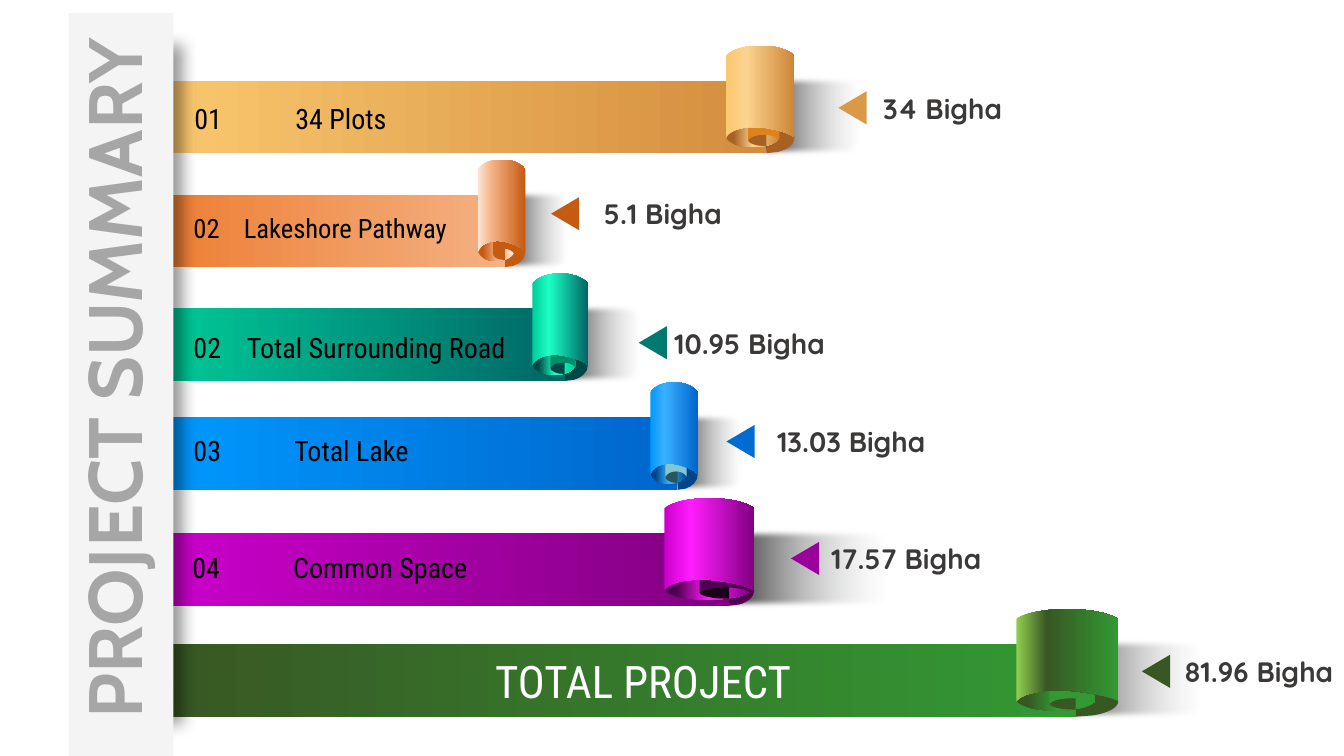
from collections import namedtuple

from lxml import etree
from pptx import Presentation
from pptx.dml.color import RGBColor
from pptx.enum.shapes import MSO_SHAPE
from pptx.enum.text import MSO_ANCHOR, MSO_AUTO_SIZE, PP_ALIGN
from pptx.oxml.ns import qn
from pptx.util import Pt

RECTANGLE, OVAL = MSO_SHAPE.RECTANGLE, MSO_SHAPE.OVAL
TRIANGLE = MSO_SHAPE.ISOSCELES_TRIANGLE
TOP, NO_FIT = MSO_ANCHOR.TOP, MSO_AUTO_SIZE.NONE
LEFT, CENTER = PP_ALIGN.LEFT, PP_ALIGN.CENTER

EMU_PER_PX = 9144  # 100 px to the inch

# Colours
BLACK, WHITE = RGBColor(0, 0, 0), RGBColor(255, 255, 255)
PANEL, TITLE_GRAY = RGBColor(0xF4, 0xF4, 0xF4), RGBColor(0xA6, 0xA6, 0xA6)
VALUE_GRAY, MIST = RGBColor(0x3B, 0x38, 0x38), RGBColor(0xE9, 0xEB, 0xEA)
GOLD, GOLD_GLOW = RGBColor(0xFA, 0xC8, 0x6F), RGBColor(0xFB, 0xD4, 0x8F)
GOLD_END, GOLD_EDGE = RGBColor(0xD4, 0x8D, 0x3E), RGBColor(0xCE, 0x85, 0x37)
GOLD_DARK, GOLD_CORE = RGBColor(0xA7, 0x61, 0x24), RGBColor(0xDD, 0x82, 0x1D)
GOLD_ARROW = RGBColor(0xDB, 0x99, 0x48)
ORANGE, PEACH = RGBColor(0xED, 0x7D, 0x31), RGBColor(0xF4, 0xB1, 0x83)
CREAM, RUST = RGBColor(0xFB, 0xE5, 0xD6), RGBColor(0xC5, 0x5A, 0x11)
TEAL, TEAL_GLOW = RGBColor(0x00, 0xCC, 0x99), RGBColor(0x1D, 0xFF, 0xC4)
TEAL_END, TEAL_DARK = RGBColor(0x00, 0x66, 0x66), RGBColor(0x00, 0x48, 0x46)
TEAL_CORE, TEAL_ARROW = RGBColor(0x00, 0x8E, 0x69), RGBColor(0x00, 0x7A, 0x70)
BLUE, BLUE_GLOW = RGBColor(0x00, 0x99, 0xFF), RGBColor(0x3B, 0xB0, 0xFF)
BLUE_END, BLUE_DARK = RGBColor(0x00, 0x66, 0xCC), RGBColor(0x00, 0x45, 0x8A)
BLUE_CORE, BLUE_FLAP = RGBColor(0x81, 0xC6, 0xD1), RGBColor(0x28, 0x58, 0x5E)
BLUE_ARROW = RGBColor(0x00, 0x6C, 0xD2)
PURPLE, PURPLE_GLOW = RGBColor(0xCC, 0x00, 0xCC), RGBColor(0xFF, 0x1D, 0xFF)
PURPLE_END, PURPLE_DARK = RGBColor(0x80, 0x00, 0x80), RGBColor(0x50, 0x00, 0x50)
PURPLE_FLAP, PURPLE_ARROW = RGBColor(0x1A, 0x00, 0x1A), RGBColor(0x9A, 0x00, 0x9A)
LIME, FOREST = RGBColor(0x92, 0xD0, 0x50), RGBColor(0x38, 0x57, 0x23)
GREEN = RGBColor(0x33, 0x99, 0x33)

# Scroll edges run left to right: curl, core, ribbon end, eye end, curl end
Scroll = namedtuple("Scroll", "top curl core end eye right shade")
Palette = namedtuple("Palette", "ribbon curl eye core flap arrow")
Label = namedtuple("Label", "text box tab size")
Value = namedtuple("Value", "text arrow box")

BANDS = [
    (Scroll(45, 720, 742, 760, 773, 788, (746, 114)),
     Palette((GOLD, GOLD_END), (GOLD, GOLD_GLOW, GOLD_EDGE),
             (GOLD_DARK, GOLD_GLOW, GOLD_EDGE), GOLD_CORE, GOLD_DARK, GOLD_ARROW),
     Label("01\t34 Plots", (183, 96, 332, 44), 100, 20),
     Value("34 Bigha", (829, 93), (855, 86, 160, 44))),
    (Scroll(158, 474, 489, 501, 510, 521, (492, 79)),
     Palette((ORANGE, PEACH), (CREAM, PEACH, RUST), (RUST, PEACH, CREAM),
             RUST, RUST, RUST),
     Label("02\tLakeshore Pathway", (182, 205, 281, 42), 50, 19),
     Value("5.1 Bigha", (544, 198), (570, 190, 175, 44))),
    (Scroll(271, 528, 546, 560, 571, 583, (549, 93)),
     Palette((TEAL, TEAL_END), (TEAL, TEAL_GLOW, TEAL_END),
             (TEAL_DARK, TEAL_GLOW, TEAL), TEAL_CORE, TEAL_DARK, TEAL_ARROW),
     Label("02\tTotal Surrounding Road", (182, 323, 451, 44), 53, 20),
     Value("10.95 Bigha", (631, 326), (656, 319, 175, 44))),
    (Scroll(379, 645, 660, 672, 681, 692, (663, 79)),
     Palette((BLUE, BLUE_END), (BLUE, BLUE_GLOW, BLUE_END),
             (BLUE_DARK, BLUE_GLOW, BLUE_DARK), BLUE_CORE, BLUE_FLAP, BLUE_ARROW),
     Label("03\tTotal Lake", (182, 425, 389, 44), 100, 20),
     Value("13.03 Bigha", (718, 424), (746, 416, 197, 44))),
    (Scroll(494, 659, 694, 723, 744, 748, (703, 185)),
     Palette((PURPLE, PURPLE_END), (PURPLE, PURPLE_GLOW, PURPLE_END),
             (PURPLE_DARK, PURPLE_GLOW, PURPLE_END), PURPLE_DARK, PURPLE_FLAP,
             PURPLE_ARROW),
     Label("04\tCommon Space", (181, 541, 343, 44), 100, 20),
     Value("17.57 Bigha", (782, 540), (807, 532, 184, 44))),
    (Scroll(604, 1008, 1041, 1067, 1086, 1109, (1032, 169)),
     Palette((FOREST, GREEN), (LIME, FOREST, GREEN), (FOREST, GREEN, GREEN),
             GREEN, FOREST, FOREST),
     None,
     Value("81.96 Bigha", (1130, 652), (1155, 644, 187, 44))),
]


def px(length):
    return round(length * EMU_PER_PX)


def lip(tip, end, y, half):
    """Start and segments of a rounded tongue from a tip to a straight end."""
    run = end - tip
    at = lambda share, rise: (tip + run * share, y + half * rise)
    return at(0, 0), [[at(0, 0.4), at(0.25, 0.77), at(0.6, 0.92)],
                      [at(1, 1)], [at(1, -1)], [at(0.6, -0.92)],
                      [at(0.25, -0.77), at(0, -0.4), at(0, 0)]]


def write(frame, text, font="Roboto Condensed", size=20, color=BLACK, bold=False,
          align=LEFT, tab=None):
    frame.word_wrap = True
    frame.auto_size = NO_FIT
    frame.vertical_anchor = TOP
    paragraph = frame.paragraphs[0]
    paragraph.text = text
    paragraph.alignment = align
    if tab:
        stops = etree.SubElement(paragraph._p.get_or_add_pPr(), qn("a:tabLst"))
        etree.SubElement(stops, qn("a:tab"), pos=str(px(tab)), algn="l")
    style = paragraph.runs[0].font
    style.name, style.size, style.bold = font, Pt(size), bold
    style.color.rgb = color


class SummarySlide:
    def __init__(self, deck):
        self.slide = deck.slides.add_slide(deck.slide_layouts[5])
        self.shapes = self.slide.shapes

    def paint(self, shape, fill):
        """Fill with one colour, or with (position, colour, alpha) stops."""
        shape.shadow.inherit = False
        shape.line.fill.background()
        if isinstance(fill, RGBColor):
            shape.fill.solid()
            shape.fill.fore_color.rgb = fill
            return shape
        shape.fill.gradient()
        shape.fill.gradient_angle = 0
        stops = shape._element.spPr.find(".//" + qn("a:gsLst"))
        for old in list(stops):
            stops.remove(old)
        for position, color, alpha in fill:
            stop = etree.SubElement(stops, qn("a:gs"), pos=str(position * 1000))
            tint = etree.SubElement(stop, qn("a:srgbClr"), val=str(color))
            if alpha < 100:
                etree.SubElement(tint, qn("a:alpha"), val=str(alpha * 1000))
        return shape

    def block(self, kind, box, fill, rotation=0):
        shape = self.shapes.add_shape(kind, *map(px, box))
        shape.rotation = rotation
        return self.paint(shape, fill)

    def outline(self, start, segments, fill):
        """Segments hold one point for a line and three for a curve."""
        builder = self.shapes.build_freeform(*map(px, start))
        builder.add_line_segments([(px(x), px(y)) for part in segments for x, y in part])
        shape = builder.convert_to_shape()
        steps = iter(shape._element.spPr.findall(".//" + qn("a:lnTo")))
        for part in segments:
            first, *others = [next(steps) for _ in part]
            if others:
                first.tag = qn("a:cubicBezTo")
                for other in others:
                    first.append(other[0])
                    other.getparent().remove(other)
        return self.paint(shape, fill)

    def effect(self, shape, kind, **settings):
        effects = shape._element.spPr.find(qn("a:effectLst"))
        return etree.SubElement(effects, qn(kind), **settings)

    def text(self, text, box, **style):
        write(self.shapes.add_textbox(*map(px, box)).text_frame, text, **style)

    def title(self, text, box, rotation, **style):
        title = self.shapes.title
        title.left, title.top, title.width, title.height = map(px, box)
        title.rotation = rotation
        write(title.text_frame, text, **style)
        self.shapes._spTree.append(title._element)  # in front of the panel

    def scroll(self, s, colors):
        top, width, bend = s.top, s.right - s.curl, (s.eye - s.core) * 0.15
        ramp = lambda places, tints: [(p, c, 100) for p, c in zip(places, tints)]
        along = lambda share, drop: (s.curl + width * share, top + drop)
        shade = self.block(RECTANGLE, (s.shade[0], top + 27, s.shade[1], 86),
                           [(0, BLACK, 100), (100, MIST, 0)])
        self.effect(shade, "a:softEdge", rad="63500")
        self.outline(*lip(s.right, s.end, top + 92, 15), colors.eye[0])
        self.block(RECTANGLE, (151, top + 35, s.end - 151, 72),
                   ramp((0, 100), colors.ribbon))
        self.block(OVAL, (s.curl, top + 79, s.eye - s.curl, 22),
                   ramp((14, 52, 100), colors.eye))
        self.outline(*lip(s.core, s.end, top + 94, 6), colors.flap)
        self.outline((s.core, top + 51), [
            [(s.core + bend, top + 44), (s.eye - bend, top + 44), (s.eye, top + 51)],
            [(s.eye, top + 94)],
            [(s.eye - bend, top + 87), (s.core + bend, top + 87), (s.core, top + 94)],
        ], colors.core)
        self.outline(along(0, 10), [
            [along(0.2, -3), along(0.8, -3), along(1, 10)],
            [along(1, 91)],
            [along(0.9, 86), along(0.6, 81), along(0.42, 81)],
            [along(0.21, 81), along(0.04, 85), along(0, 92)],
        ], ramp((0, 30, 100), colors.curl))


def main():
    deck = Presentation()
    deck.slide_width, deck.slide_height = px(1333), px(750)
    page = SummarySlide(deck)

    # Scrolls
    for scroll, palette, _, _ in BANDS:
        page.scroll(scroll, palette)

    # Side panel
    fold = page.block(RECTANGLE, (116, 45, 55, 672), PANEL)
    cast = page.effect(fold, "a:outerShdw", blurRad=str(Pt(11)), dist=str(Pt(7)), dir="0")
    cast_color = etree.SubElement(cast, qn("a:srgbClr"), val=str(BLACK))
    etree.SubElement(cast_color, qn("a:alpha"), val="40000")
    page.block(RECTANGLE, (68, 13, 104, 737), PANEL)
    page.title("PROJECT SUMMARY", (-314, 325, 851, 101), 270, font="Cabin", size=54,
               color=TITLE_GRAY, bold=True, align=CENTER)

    # Labels and values
    for _, palette, label, value in BANDS:
        if label:
            page.text(label.text, label.box, size=label.size, tab=label.tab)
        page.block(TRIANGLE, (*value.arrow, 33, 28), palette.arrow, rotation=270)
        page.text(value.text, value.box, font="Quicksand", color=VALUE_GRAY, bold=True,
                  align=CENTER)
    page.text("TOTAL PROJECT", (301, 644, 674, 64), size=32, color=WHITE, align=CENTER)

    deck.save("out.pptx")


if __name__ == "__main__":
    main()
